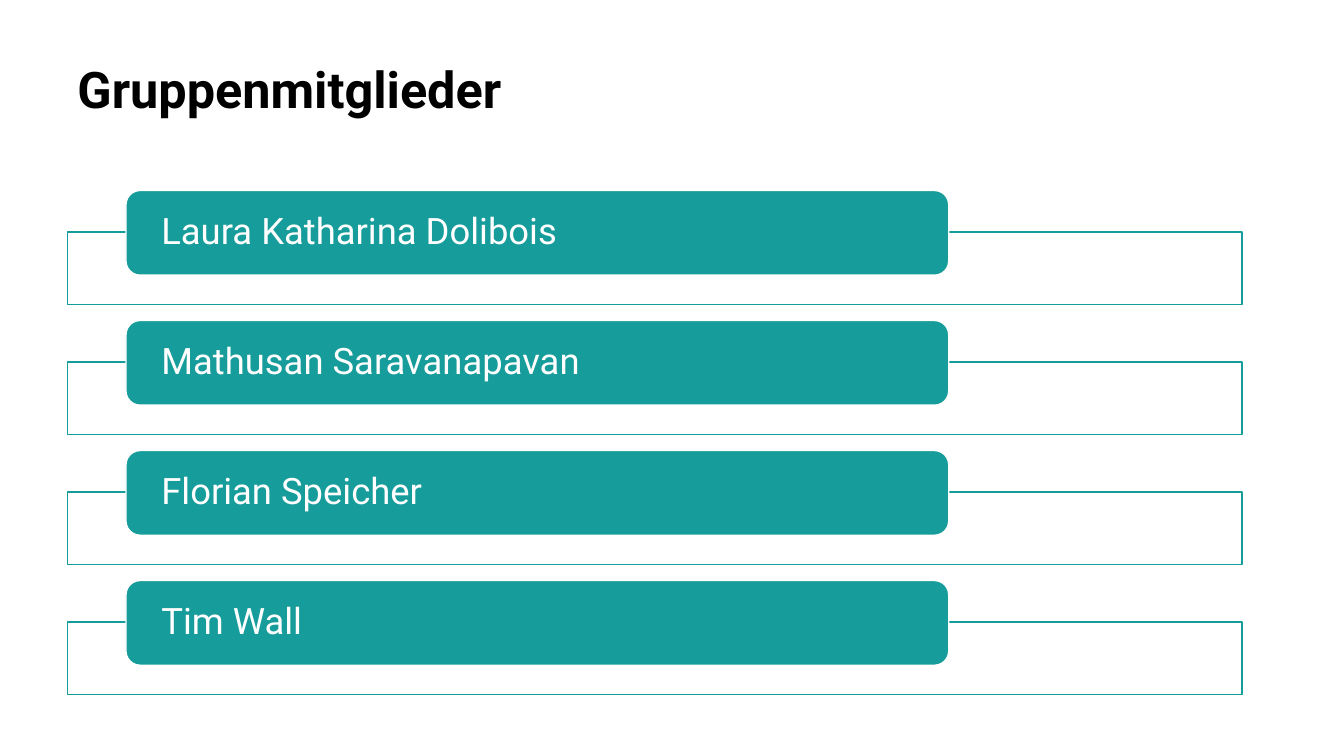
from lxml import etree
from pptx import Presentation
from pptx.dml.color import RGBColor
from pptx.enum import shapes, text
from pptx.oxml import ns
from pptx.util import Inches, Pt

TEAL = "169C9A"
WHITE = "FFFFFF"
BLACK = "000000"
FONT = "Roboto"
MEMBERS = [
    "Laura Katharina Dolibois",
    "Mathusan Saravanapavan",
    "Florian Speicher",
    "Tim Wall",
]
LEFT = 0.67
WIDTH = 11.65
FIRST_TOP = 1.89
ROW_STEP = 1.29


def color(value):
    return RGBColor.from_string(value)


def write(shape, content, size, font_color, bold=False):
    frame = shape.text_frame
    frame.word_wrap = True
    para = frame.paragraphs[0]
    para.text = content
    para.alignment = text.PP_ALIGN.LEFT
    para.line_spacing = 0.9
    para.font.name = FONT
    para.font.size = Pt(size)
    para.font.bold = bold
    para.font.color.rgb = color(font_color)
    return frame


def add_title(page, content):
    box = page.shapes.add_textbox(Inches(LEFT), Inches(0.6), Inches(WIDTH), Inches(1.24))
    write(box, content, 36, BLACK, bold=True)


def add_panel(page, kind, left, top, width, height, fill, line):
    panel = page.shapes.add_shape(
        kind, Inches(left), Inches(top), Inches(width), Inches(height)
    )
    panel.shadow.inherit = False
    panel.fill.solid()
    panel.fill.fore_color.rgb = color(fill)
    panel.line.color.rgb = color(line)
    panel.line.width = Pt(1)
    return panel


def set_opacity(shape, percent):
    fill_color = shape.fill._xPr.find(ns.qn("a:solidFill"))[0]
    etree.SubElement(fill_color, ns.qn("a:alpha"), val=str(percent * 1000))


def add_member(page, name, top):
    kinds = shapes.MSO_SHAPE
    frame_panel = add_panel(
        page, kinds.RECTANGLE, LEFT, top + 0.41, WIDTH, 0.72, WHITE, TEAL
    )
    set_opacity(frame_panel, 90)
    label = add_panel(
        page, kinds.ROUNDED_RECTANGLE, 1.25, top, 8.16, 0.84, TEAL, WHITE
    )
    frame = write(label, name, 26, WHITE)
    frame.vertical_anchor = text.MSO_ANCHOR.MIDDLE
    frame.margin_left = frame.margin_right = Inches(0.31)
    frame.margin_top = frame.margin_bottom = 0


def main():
    deck = Presentation()
    deck.slide_width = Inches(13.33)
    deck.slide_height = Inches(7.5)
    page = deck.slides.add_slide(deck.slide_layouts[6])
    add_title(page, "Gruppenmitglieder")
    for row, name in enumerate(MEMBERS):
        add_member(page, name, FIRST_TOP + row * ROW_STEP)
    deck.save("out.pptx")


if __name__ == "__main__":
    main()
